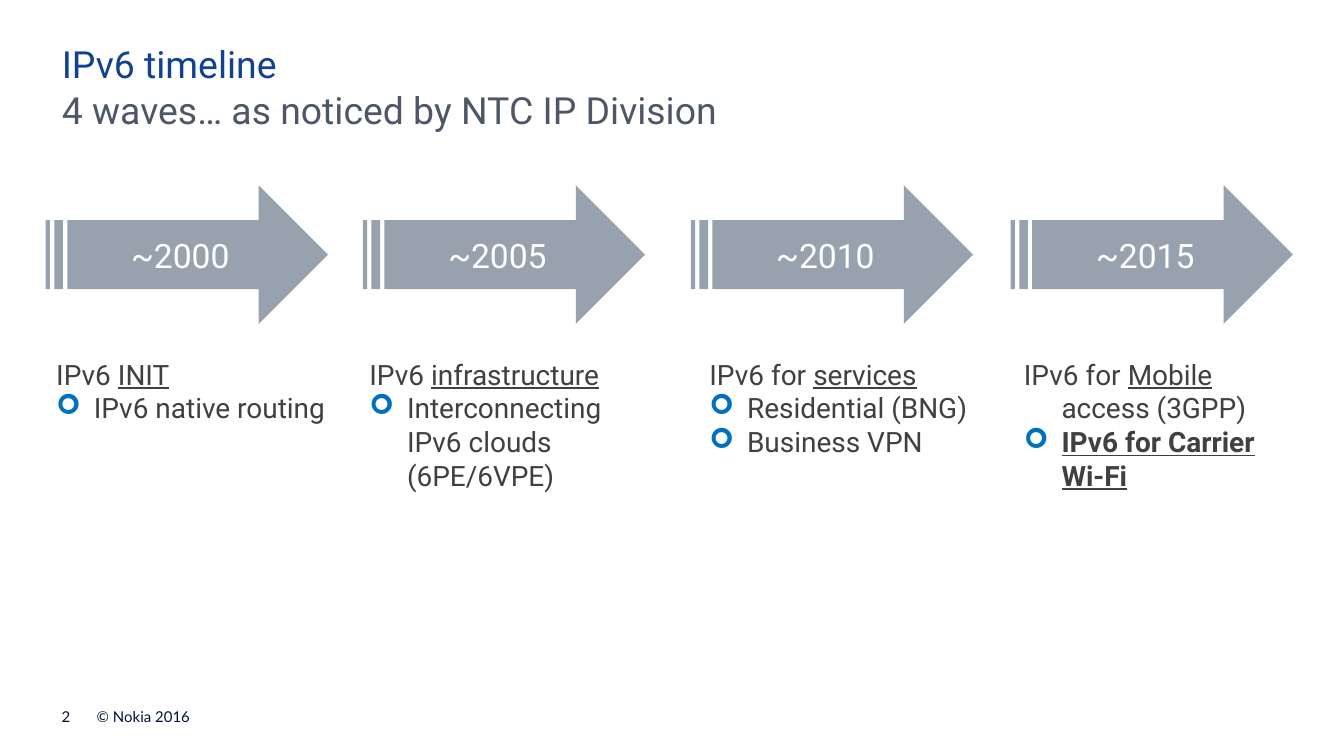
"""Build the IPv6 timeline slide with four waves of adoption."""
from lxml import etree
from pptx import Presentation
from pptx import util as u
from pptx.dml.color import RGBColor
from pptx.enum import shapes, text
from pptx.oxml.ns import qn


def rgb(color):
    """Turn a hex string into a colour."""
    return RGBColor.from_string(color)


def write(paragraph, words, size=15, color="404040", font="Roboto", bold=False, underline=False):
    """Add a formatted run to a paragraph."""
    run = paragraph.add_run()
    run.text = words
    run.font.size = u.Pt(size)
    run.font.name = font
    run.font.bold = bold
    run.font.underline = underline
    run.font.color.rgb = rgb(color)


deck = Presentation()
deck.slide_width, deck.slide_height = u.Inches(10), u.Inches(5.625)
slide = deck.slides.add_slide(deck.slide_layouts[1])
heading, subheading = slide.placeholders

for holder, top, words, color in (
    (heading, 0.31, "IPv6 timeline", "124191"),
    (subheading, 0.65, "4 waves… as noticed by NTC IP Division", "4D5766"),
):
    holder.left, holder.top = u.Inches(0.46), u.Inches(top)
    holder.width, holder.height = u.Inches(9.09), u.Inches(0.34)
    frame = holder.text_frame
    frame.margin_left = frame.margin_right = frame.margin_top = frame.margin_bottom = 0
    frame.vertical_anchor = text.MSO_ANCHOR.TOP
    frame.auto_size = text.MSO_AUTO_SIZE.NONE
    line = frame.paragraphs[0]
    properties = line._p.get_or_add_pPr()
    properties.set("marL", "0")
    properties.set("indent", "0")
    etree.SubElement(properties, qn("a:buNone"))
    line.alignment = text.PP_ALIGN.LEFT
    line.space_before = u.Pt(0)
    write(line, words, size=20, color=color)

waves = [
    ("~2000", 0.34, 0.32, 2.34, 0.61, ("IPv6 ", "INIT", ""), ["IPv6 native routing"], False),
    ("~2005", 2.7, 2.65, 2.31, 1.11, ("IPv6 ", "infrastructure", ""),
     ["Interconnecting IPv6 clouds (6PE/6VPE)"], False),
    ("~2010", 5.14, 5.18, 2.18, 0.86, ("IPv6 for ", "services", ""),
     ["Residential (BNG)", "Business VPN"], False),
    ("~2015", 7.52, 7.52, 2.21, 1.11, ("IPv6 for ", "Mobile ", "access (3GPP)"),
     ["IPv6 for Carrier Wi-Fi"], True),
]
hanging = u.Inches(0.28)

for year, arrow_left, left, width, height, (lead, theme, rest), points, stressed in waves:
    arrow = slide.shapes.add_shape(
        shapes.MSO_SHAPE.STRIPED_RIGHT_ARROW,
        u.Inches(arrow_left), u.Inches(1.38), u.Inches(2.1), u.Inches(1.03))
    arrow.shadow.inherit = False
    arrow.fill.solid()
    arrow.fill.fore_color.rgb = rgb("98A2AE")
    arrow.line.fill.background()
    frame = arrow.text_frame
    frame.margin_left = frame.margin_right = u.Inches(0.07)
    frame.margin_top = frame.margin_bottom = u.Inches(0.04)
    frame.vertical_anchor = text.MSO_ANCHOR.MIDDLE
    frame.paragraphs[0].alignment = text.PP_ALIGN.CENTER
    write(frame.paragraphs[0], year, size=18, color="FFFFFF")

    notes = slide.shapes.add_textbox(
        u.Inches(left), u.Inches(2.61), u.Inches(width), u.Inches(height)).text_frame
    notes.word_wrap = True
    notes.auto_size = text.MSO_AUTO_SIZE.SHAPE_TO_FIT_TEXT
    topic = notes.paragraphs[0]
    write(topic, lead)
    write(topic, theme, underline=True)
    if rest:
        write(topic, rest)
    for point in points:
        item = notes.add_paragraph()
        properties = item._p.get_or_add_pPr()
        bullet_color = etree.SubElement(properties, qn("a:buClr"))
        etree.SubElement(bullet_color, qn("a:srgbClr"), val="0070C0")
        etree.SubElement(properties, qn("a:buFont"), typeface="Wingdings")
        etree.SubElement(properties, qn("a:buChar"), char="➢")
        write(item, point, bold=stressed, underline=stressed)
    for line in notes.paragraphs:
        properties = line._p.get_or_add_pPr()
        properties.set("marL", str(hanging))
        properties.set("indent", str(-hanging))

for left, width, words in ((0.46, 0.16, "2"), (0.72, 1.97, "© Nokia 2016")):
    footer = slide.shapes.add_textbox(
        u.Inches(left), u.Inches(5.27), u.Inches(width), u.Inches(0.13)).text_frame
    footer.margin_left = footer.margin_right = footer.margin_top = footer.margin_bottom = 0
    footer.word_wrap = True
    footer.vertical_anchor = text.MSO_ANCHOR.BOTTOM
    write(footer.paragraphs[0], words, size=8, color="001135", font="Lato")

deck.save("out.pptx")
